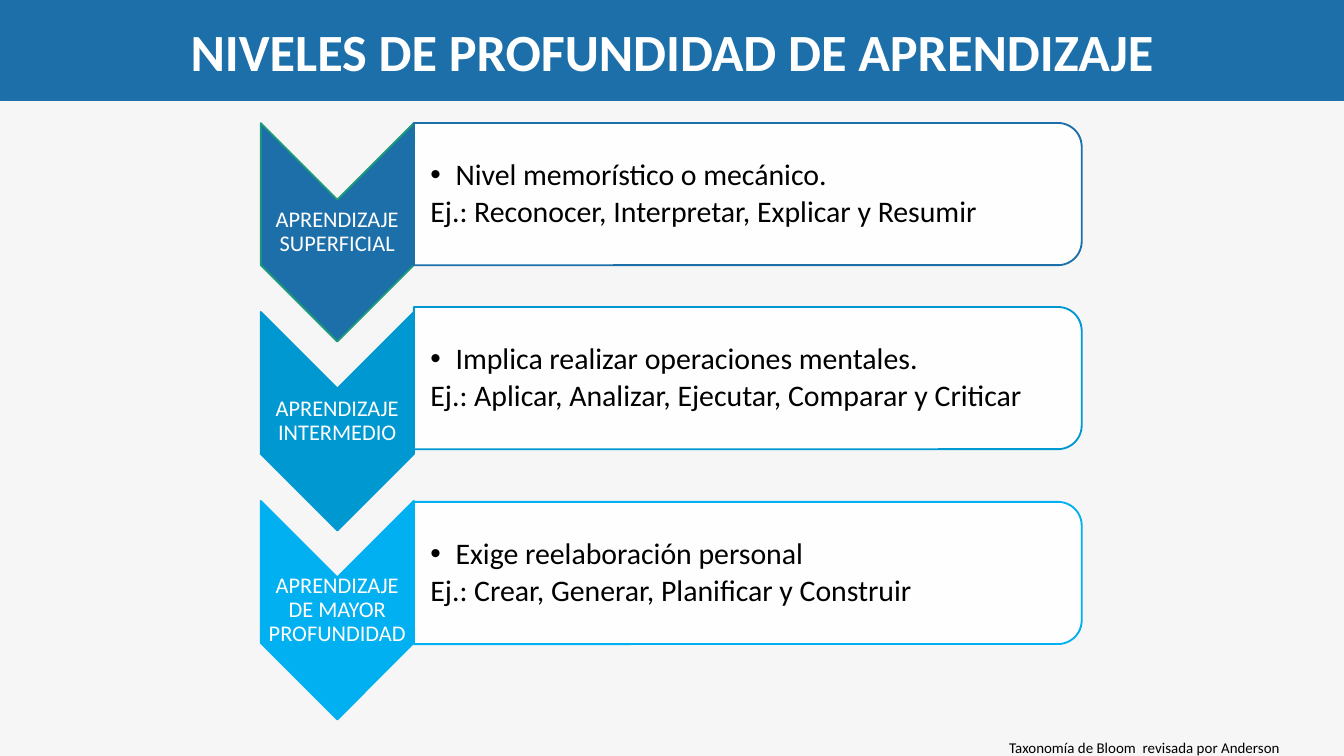
from lxml import etree
from pptx import Presentation
from pptx.dml.color import RGBColor
from pptx.enum.shapes import MSO_SHAPE
from pptx.enum.text import MSO_ANCHOR, MSO_AUTO_SIZE, PP_ALIGN
from pptx.oxml.ns import qn
from pptx.util import Pt

CHEVRON = MSO_SHAPE.CHEVRON
PANEL = MSO_SHAPE.ROUND_2_SAME_RECTANGLE
MIDDLE, TOP = MSO_ANCHOR.MIDDLE, MSO_ANCHOR.TOP
CENTER, LEFT = PP_ALIGN.CENTER, PP_ALIGN.LEFT
FIXED = MSO_AUTO_SIZE.NONE
TITLE_ONLY = 5

COLORS = {
    "background": "F6F6F6",
    "blue": "1D6FA9",
    "green": "1D9A78",
    "ocean": "0098D0",
    "sky": "00B0F0",
    "white": "FFFFFF",
    "black": "000000",
}


class SlideBuilder:
    """Holds the style and the current slide; all lengths are in points."""

    font = "Calibri"

    def __init__(self, slide):
        self.slide = slide
        slide.background.fill.solid()
        slide.background.fill.fore_color.rgb = self.color("background")

    def color(self, name):
        return RGBColor.from_string(COLORS[name])

    def paint(self, shape, fill, line, width=1):
        shape.fill.solid()
        shape.fill.fore_color.rgb = self.color(fill)
        shape.line.color.rgb = self.color(line)
        shape.line.width = Pt(width)

    def frame(self, shape, anchor, insets):
        frame = shape.text_frame
        frame.word_wrap = True
        frame.auto_size = FIXED
        frame.vertical_anchor = anchor
        frame.margin_left, frame.margin_top, frame.margin_right, frame.margin_bottom = map(Pt, insets)
        return frame

    def add_span(self, para, text, size, color, align=LEFT, bold=False):
        para.alignment = align
        span = para.add_run()
        span.text = text
        span.font.name = self.font
        span.font.size = Pt(size)
        span.font.bold = bold
        span.font.color.rgb = self.color(color)

    def title(self, text, width, height):
        title = self.slide.shapes.title
        title.left, title.top, title.width, title.height = Pt(0), Pt(0), Pt(width), Pt(height)
        self.paint(title, "blue", "blue", 0.5)
        frame = self.frame(title, MIDDLE, (7.2, 3.6, 7.2, 3.6))
        self.add_span(frame.paragraphs[0], text, 28, "white", CENTER, bold=True)

    def turned_shape(self, kind, left, top, width, height, fill, line):
        """Place a shape turned by 90 degrees so that it covers the given area."""
        shift = (width - height) / 2
        shape = self.slide.shapes.add_shape(
            kind, Pt(left + shift), Pt(top - shift), Pt(height), Pt(width))
        shape.rotation = 90
        shape.shadow.inherit = False
        self.paint(shape, fill, line)
        return shape

    def panel(self, left, top, width, height, line):
        shape = self.turned_shape(PANEL, left, top, width, height, "white", line)
        white = shape._element.spPr.find(qn("a:solidFill"))[0]
        etree.SubElement(white, qn("a:alpha"), val="90000")

    def text_box(self, left, top, width, height, anchor=MIDDLE, insets=(0.7,) * 4):
        box = self.slide.shapes.add_textbox(Pt(left), Pt(top), Pt(width), Pt(height))
        return self.frame(box, anchor, insets)

    def label(self, text, left, top, width, height):
        para = self.text_box(left, top, width, height).paragraphs[0]
        para.line_spacing = 0.9
        self.add_span(para, text, 12, "white", CENTER)

    def description(self, lines, left, top, width, height):
        frame = self.text_box(left, top, width, height, insets=(8.9, 0.7, 0.7, 0.7))
        for index, text in enumerate(lines):
            para = frame.add_paragraph() if index else frame.paragraphs[0]
            para.line_spacing = 0.9
            para.space_after = Pt(2.4)
            self.add_span(para, text, 16, "black")
            # Only the first line has a bullet; both hang by the same indent
            properties = para._p.get_or_add_pPr()
            properties.set("marL", str(Pt(13.5)))
            properties.set("indent", str(-Pt(13.5)))
            if index == 0:
                etree.SubElement(properties, qn("a:buFont"), typeface="Arial")
                etree.SubElement(properties, qn("a:buChar"), char="•")
            else:
                etree.SubElement(properties, qn("a:buNone"))

    def source_note(self, text, left, top, width, height):
        frame = self.text_box(left, top, width, height, TOP, (7.2, 3.6, 7.2, 3.6))
        self.add_span(frame.paragraphs[0], text, 8, "black")


# Label, description lines, fill, chevron outline, panel top
LEVELS = [
    ("APRENDIZAJE SUPERFICIAL",
     ["Nivel memorístico o mecánico.", "Ej.: Reconocer, Interpretar, Explicar y Resumir"],
     "blue", "green", 65.9),
    ("APRENDIZAJE INTERMEDIO",
     ["Implica realizar operaciones mentales.",
      "Ej.: Aplicar, Analizar, Ejecutar, Comparar y Criticar"],
     "ocean", "ocean", 164.5),
    ("APRENDIZAJE DE MAYOR PROFUNDIDAD",
     ["Exige reelaboración personal", "Ej.: Crear, Generar, Planificar y Construir"],
     "sky", "sky", 268.9),
]
CHEVRON_LEFT, CHEVRON_TOP, CHEVRON_STEP = 139.7, 66, 101.2
CHEVRON_WIDTH, CHEVRON_HEIGHT = 82, 117
PANEL_LEFT, PANEL_WIDTH, PANEL_HEIGHT = 221.7, 357.8, 76.2


def main():
    deck = Presentation()
    deck.slide_width, deck.slide_height = Pt(720), Pt(405)
    page = SlideBuilder(deck.slides.add_slide(deck.slide_layouts[TITLE_ONLY]))

    # Title band
    page.title("NIVELES DE PROFUNDIDAD DE APRENDIZAJE", 720, 54)

    # One chevron and one panel per level
    for index, (label, lines, fill, outline, panel_top) in enumerate(LEVELS):
        top = CHEVRON_TOP + index * CHEVRON_STEP
        page.turned_shape(CHEVRON, CHEVRON_LEFT, top, CHEVRON_WIDTH, CHEVRON_HEIGHT, fill, outline)
        page.label(label, CHEVRON_LEFT, top + 41, CHEVRON_WIDTH, 35)
        page.panel(PANEL_LEFT, panel_top, PANEL_WIDTH, PANEL_HEIGHT, fill)
        page.description(lines, PANEL_LEFT, panel_top + 3.9, 354, 68.4)

    # Source note
    page.source_note("Taxonomía de Bloom  revisada por Anderson", 533.5, 392.4, 186.5, 17)

    deck.save("out.pptx")


if __name__ == "__main__":
    main()
